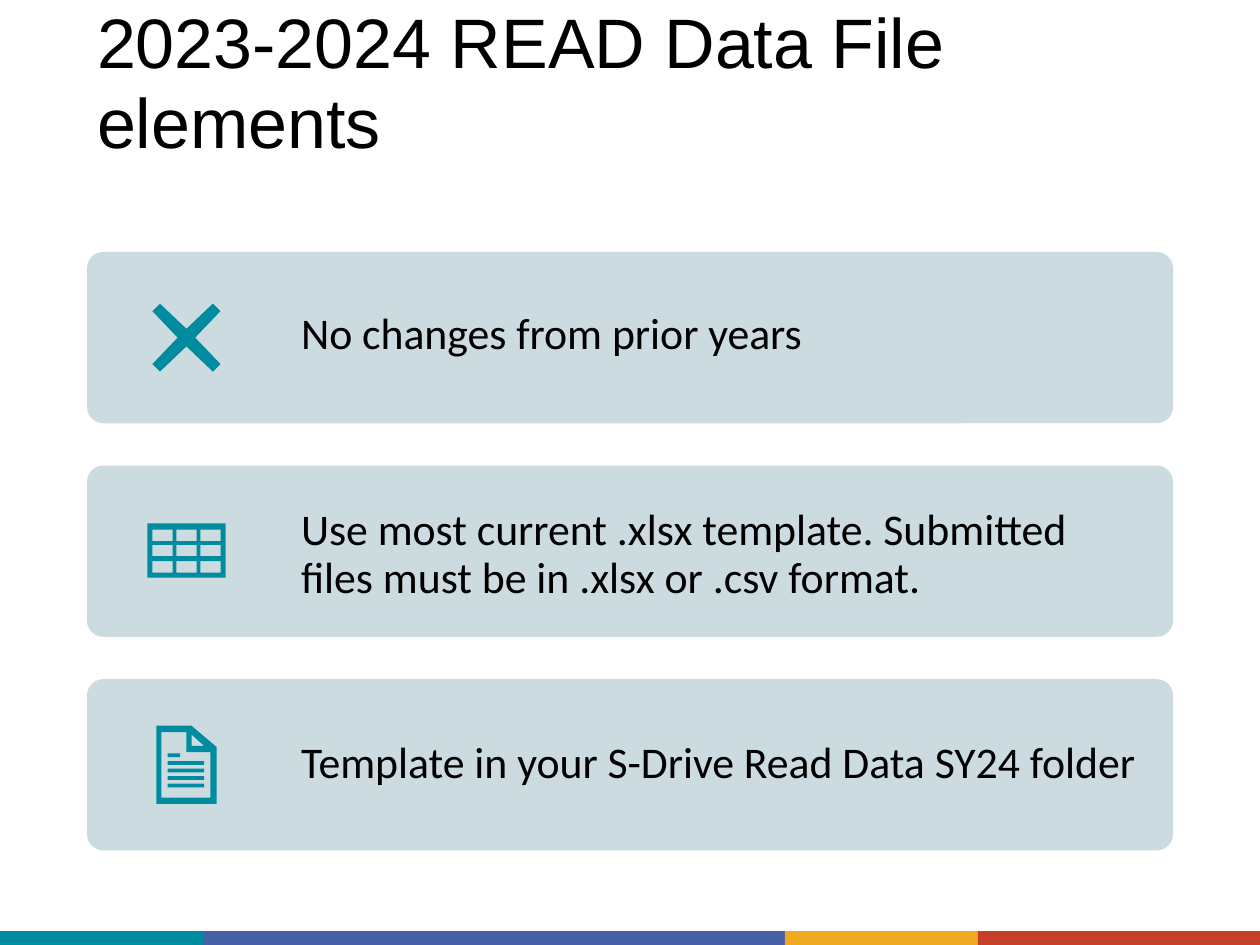
import dataclasses

import pptx
import pptx.dml.color
import pptx.enum.shapes
import pptx.enum.text
import pptx.util

Inches = pptx.util.Inches
Pt = pptx.util.Pt


@dataclasses.dataclass(frozen=True)
class Theme:
    teal: str = "008CA0"
    blue: str = "455FA9"
    gold: str = "EFAA1F"
    red: str = "C63F28"
    card: str = "CBDBDF"
    ink: str = "000000"
    title_font: str = "Arial"
    body_font: str = "Calibri"
    title_size: float = 40
    body_size: float = 25


def write_text(tf, text, *, font, size, color, inset=0.02, spacing=None):
    """Fill a text frame, one paragraph for each line of text."""
    tf.word_wrap = True
    tf.auto_size = pptx.enum.text.MSO_AUTO_SIZE.NONE
    tf.vertical_anchor = pptx.enum.text.MSO_ANCHOR.TOP
    tf.margin_left = tf.margin_right = tf.margin_bottom = 0
    tf.margin_top = Inches(inset)
    for i, line in enumerate(text.split("\n")):
        p = tf.add_paragraph() if i else tf.paragraphs[0]
        p.alignment = pptx.enum.text.PP_ALIGN.LEFT
        p.space_before = Pt(0)
        if spacing:
            p.line_spacing = Pt(spacing)
        r = p.add_run()
        r.text = line
        r.font.name = font
        r.font.size = Pt(size)
        r.font.color.rgb = pptx.dml.color.RGBColor.from_string(color)


def rect(left, top, right, bottom):
    return [(left, top), (right, top), (right, bottom), (left, bottom)]


def cross_outlines():
    """One arm turned through four quarter turns."""
    arm, points = [(0.07, 0), (0.27, 0.21), (0.21, 0.27)], []
    for _ in range(4):
        points += arm
        arm = [(-y, x) for x, y in arm]
    return [points]


def table_outlines():
    """A frame with three by three open cells."""
    cells = [rect(x, y, x + 0.16, y + 0.09)
             for x in (-0.27, -0.08, 0.11) for y in (-0.17, -0.05, 0.08)]
    return [rect(-0.31, -0.22, 0.31, 0.21)] + cells


def document_outlines():
    """A page with a folded corner and lines of text."""
    page = [(-0.24, -0.31), (0.04, -0.31), (0.24, -0.14), (0.24, 0.31), (-0.24, 0.31)]
    inside = [(-0.2, -0.26), (0, -0.26), (0, -0.1), (0.19, -0.1), (0.19, 0.26), (-0.2, 0.26)]
    fold = [(0.04, -0.24), (0.14, -0.15), (0.04, -0.15)]
    lines = [rect(-0.15, -0.09 + 0.06 * i, 0.14 if i else -0.05, -0.06 + 0.06 * i)
             for i in range(5)]
    return [page, inside, fold] + lines


class SlideBuilder:
    def __init__(self, slide, theme):
        self.s = slide
        self.theme = theme

    def paint(self, sp, color):
        sp.shadow.inherit = False
        sp.fill.solid()
        sp.fill.fore_color.rgb = pptx.dml.color.RGBColor.from_string(color)
        sp.line.fill.background()

    def box(self, left, top, width, height, color, radius=0):
        kinds = pptx.enum.shapes.MSO_SHAPE
        kind = kinds.ROUNDED_RECTANGLE if radius else kinds.RECTANGLE
        sp = self.s.shapes.add_shape(
            kind, Inches(left), Inches(top), Inches(width), Inches(height))
        if radius:
            sp.adjustments[0] = radius / min(width, height)
        self.paint(sp, color)

    def icon(self, center_x, center_y, outlines):
        """Draw outlines as one shape; nested outlines become holes."""
        contours = [[(Inches(center_x + x), Inches(center_y + y)) for x, y in outline]
                    for outline in outlines]
        builder = self.s.shapes.build_freeform(*contours[0][0])
        for i, points in enumerate(contours):
            if i:
                builder.move_to(*points[0])
            builder.add_line_segments(points[1:], close=True)
        self.paint(builder.convert_to_shape(), self.theme.teal)

    def title(self, text):
        sp = self.s.shapes.title
        sp.left, sp.top, sp.width, sp.height = map(Inches, (0.77, 0, 8.36, 1.3))
        write_text(sp.text_frame, text, font=self.theme.title_font,
                   size=self.theme.title_size, color=self.theme.ink, spacing=45.6)

    def label(self, left, top, width, height, text, **fmt):
        sp = self.s.shapes.add_textbox(
            Inches(left), Inches(top), Inches(width), Inches(height))
        write_text(sp.text_frame, text, font=self.theme.body_font,
                   size=self.theme.body_size, color=self.theme.ink, **fmt)


def main():
    prs = pptx.Presentation()
    prs.slide_width, prs.slide_height = Inches(10), Inches(7.5)
    theme = Theme()
    slide = SlideBuilder(prs.slides.add_slide(prs.slide_layouts[5]), theme)

    # Colour band along the bottom edge
    edges = [0, 1.61, 6.23, 7.76, 10]
    colors = [theme.teal, theme.blue, theme.gold, theme.red]
    for left, right, color in zip(edges, edges[1:], colors):
        slide.box(left, 7.39, right - left, 0.11, color)

    slide.title("2023-2024 READ Data File\nelements")

    # Cards: icon, text, text offset, width and height, text format
    cards = [
        (cross_outlines(), "No changes from prior years", 0.41, 4.1, 0.44, {}),
        (table_outlines(),
         "Use most current .xlsx template. Submitted files must be in .xlsx or .csv format.",
         0.22, 6.4, 0.9, {"inset": 0.1, "spacing": 27.5}),
        (document_outlines(), "Template in your S-Drive Read Data SY24 folder",
         0.42, 6.72, 0.44, {}),
    ]
    first, last, height = 2, 5.39, 1.36
    pitch = (last - first) / (len(cards) - 1)
    for i, (outlines, text, offset, text_width, text_height, fmt) in enumerate(cards):
        top = first + i * pitch
        slide.box(0.69, top, 8.62, height, theme.card, radius=0.13)
        slide.icon(1.48, top + height / 2, outlines)
        slide.label(2.39, top + offset, text_width, text_height, text, **fmt)

    prs.save("out.pptx")


if __name__ == "__main__":
    main()
